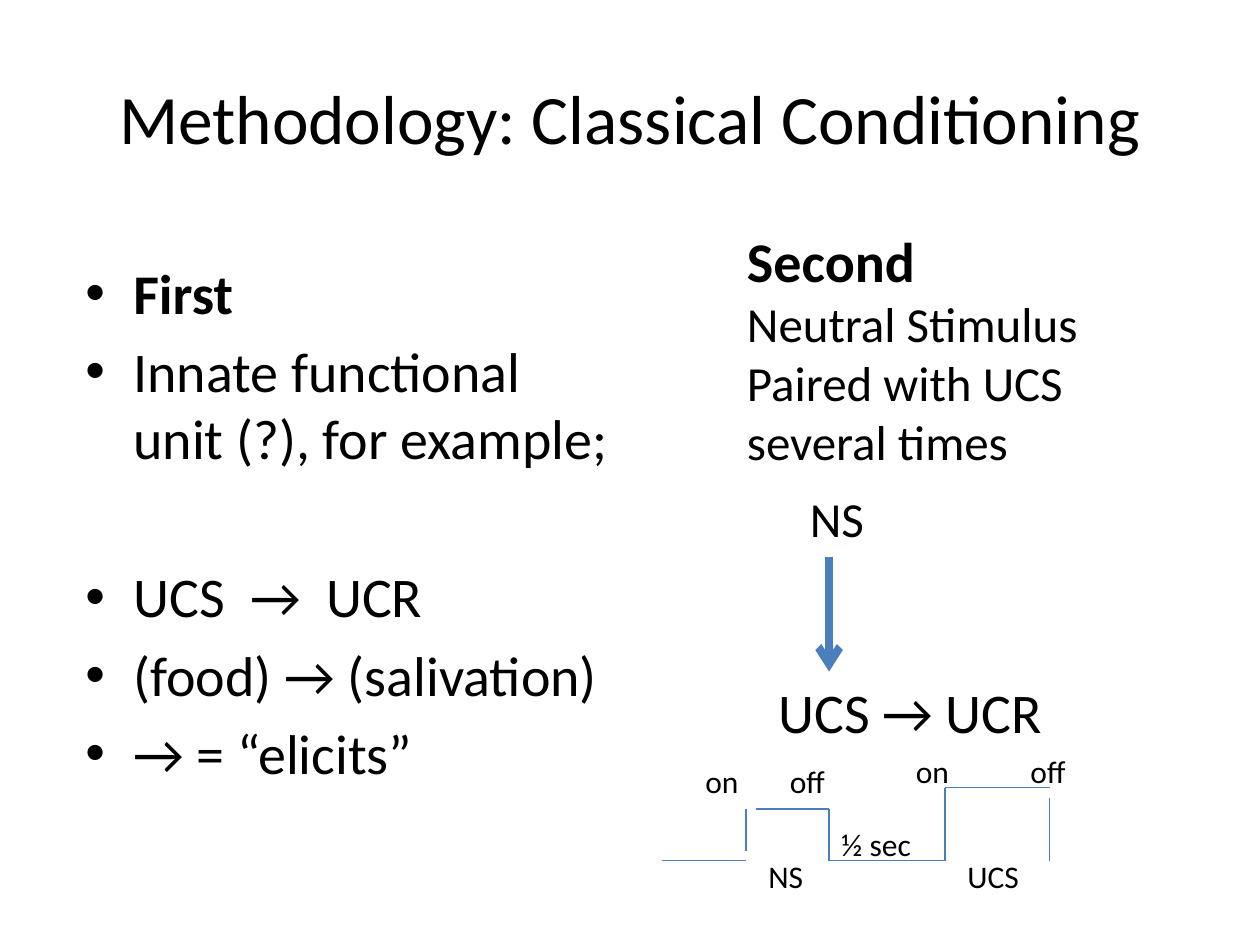
from lxml import etree
from pptx import Presentation
from pptx.dml.color import RGBColor
from pptx.enum.shapes import MSO_CONNECTOR
from pptx.enum.text import MSO_ANCHOR, PP_ALIGN
from pptx.oxml.ns import qn
from pptx.util import Inches, Pt

BLACK = RGBColor(0x00, 0x00, 0x00)
BLUE = RGBColor(0x4B, 0x7E, 0xBC)
STRAIGHT = MSO_CONNECTOR.STRAIGHT
MIDDLE = MSO_ANCHOR.MIDDLE
CENTER = PP_ALIGN.CENTER

presentation = Presentation()
presentation.slide_width = Inches(10)
presentation.slide_height = Inches(7.5)
slide = presentation.slides.add_slide(presentation.slide_layouts[6])


def add_text(left, top, width, height, lines):
    """Add a text box; each line is (text, size, bold)."""
    box = slide.shapes.add_textbox(
        Inches(left), Inches(top), Inches(width), Inches(height))
    frame = box.text_frame
    frame.word_wrap = True
    for index, (text, size, bold) in enumerate(lines):
        paragraph = frame.add_paragraph() if index else frame.paragraphs[0]
        run = paragraph.add_run()
        run.text = text
        font_format = {"name": "Calibri", "size": Pt(size), "bold": bold}
        for name, value in font_format.items():
            setattr(run.font, name, value)
        run.font.color.rgb = BLACK
    return frame


def add_line(start, end, width):
    """Add a straight blue line without shadow."""
    line = slide.shapes.add_connector(
        STRAIGHT, *(Inches(value) for value in (*start, *end)))
    line.line.color.rgb = BLUE
    line.line.width = Pt(width)
    etree.SubElement(line._element.spPr, qn("a:effectLst"))
    return line


# Title
title = add_text(0.5, 0.3, 9, 1.25,
                 [("Methodology: Classical Conditioning", 39.6, False)])
title.vertical_anchor = MIDDLE
title.paragraphs[0].alignment = CENTER

# First step: bulleted list, with a wider gap before the examples
BULLETS = [
    ("First", True, 6.4),
    ("Innate functional unit (?), for example;", False, 6.4),
    ("UCS  →  UCR", False, 52),
    ("(food) → (salivation)", False, 6.4),
    ("→ = “elicits”", False, 6.4),
]
first_step = add_text(0.58, 2, 4.42, 4.37,
                      [(text, 32, bold) for text, bold, gap in BULLETS])
for paragraph, (text, bold, gap) in zip(first_step.paragraphs, BULLETS):
    paragraph.space_before = Pt(gap)
    properties = paragraph._p.get_or_add_pPr()
    properties.set("marL", str(Inches(0.38)))
    properties.set("indent", str(Inches(-0.38)))
    etree.SubElement(properties, qn("a:buFont")).set("typeface", "Arial")
    etree.SubElement(properties, qn("a:buChar")).set("char", "•")

# Second step: pairing the stimuli
arrow = add_line((6.58, 4.42), (6.58, 5.33), 4.5)
etree.SubElement(arrow.line._get_or_add_ln(), qn("a:tailEnd")).set("type", "arrow")
add_text(6.08, 5.33, 3.08, 0.64, [("UCS → UCR", 32, False)])
add_text(5.83, 1.75, 3.08, 2.05, [
    ("Second", 32, True),
    ("Neutral Stimulus Paired with UCS several times", 28, False),
])
add_text(6.33, 3.83, 1, 0.57, [("NS", 28, False)])

# Timing diagram: on and off steps of both stimuli
BASE, NS_TOP, UCS_TOP = 6.83, 6.42, 6.25
NS_ON, NS_OFF, UCS_ON, UCS_OFF = 5.92, 6.58, 7.5, 8.33
for start, end in [
    ((5.25, BASE), (NS_ON, BASE)),
    ((NS_ON, 6.75), (NS_ON, NS_TOP)),
    ((6, NS_TOP), (NS_OFF, NS_TOP)),
    ((NS_OFF, NS_TOP), (NS_OFF, BASE)),
    ((NS_OFF, BASE), (UCS_ON, BASE)),
    ((UCS_ON, BASE), (UCS_ON, UCS_TOP)),
    ((UCS_ON, UCS_TOP), (UCS_OFF, UCS_TOP)),
    ((UCS_OFF, 6.33), (UCS_OFF, BASE)),
]:
    add_line(start, end, 0.75)

# Timing labels
for text, left, top, width in [
    ("on", 5.5, 6, 0.58),
    ("off", 6.17, 6, 0.67),
    ("NS", 6, 6.75, 0.58),
    ("½ sec", 6.58, 6.5, 0.83),
    ("on", 7.17, 5.92, 0.5),
    ("off", 8.08, 5.92, 0.58),
    ("UCS", 7.58, 6.75, 0.67),
]:
    add_text(left, top, width, 0.4, [(text, 18, False)])

presentation.save("out.pptx")
